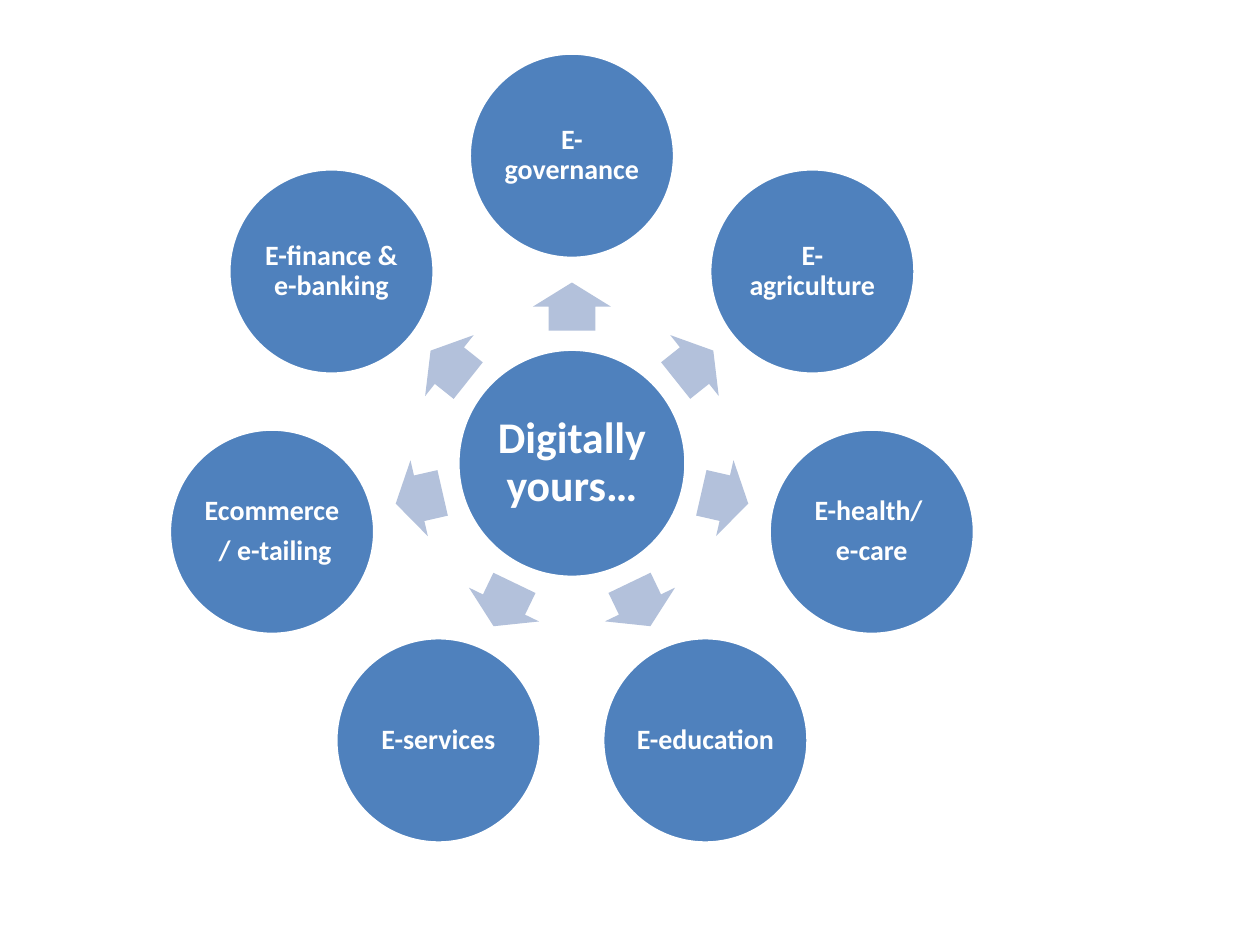
from dataclasses import dataclass
from math import cos, radians, sin

from pptx import Presentation
from pptx.dml.color import RGBColor
from pptx.enum.shapes import MSO_SHAPE
from pptx.enum.text import MSO_ANCHOR, PP_ALIGN
from pptx.util import Cm, Pt


@dataclass(frozen=True)
class Theme:
    font: str = "Calibri"
    circle: RGBColor = RGBColor(0x4F, 0x81, 0xBD)
    arrow: RGBColor = RGBColor(0xB3, 0xC1, 0xDB)
    light: RGBColor = RGBColor(0xFF, 0xFF, 0xFF)
    hub_size: int = 25
    topic_size: int = 16
    outline: int = 2


CENTER_X, CENTER_Y = 11.53, 9.34
HUB_DIAMETER, TOPIC_DIAMETER = 4.6, 4.14
TOPIC_RADIUS, ARROW_RADIUS = 6.2, 3.16
ARROW_LENGTH, ARROW_WIDTH = 0.97, 1.57

HUB = ["Digitally yours…"]
TOPICS = [
    ["E-governance"],
    ["E- agriculture"],
    ["E-health/ ", "e-care"],
    ["E-education"],
    ["E-services"],
    ["Ecommerce", " / e-tailing"],
    ["E-finance & e-banking"],
]


def set_attributes(target, values):
    for name, value in values.items():
        setattr(target, name, value)


def point_on_ring(angle, radius):
    """Return the point in cm at an angle in degrees, clockwise from the right."""
    return (CENTER_X + radius * cos(radians(angle)),
            CENTER_Y + radius * sin(radians(angle)))


class RadialSlide:
    def __init__(self, slide, theme):
        self.slide = slide
        self.theme = theme

    def add_centered_shape(self, kind, center, width, height, color):
        x, y = center
        shape = self.slide.shapes.add_shape(
            kind, Cm(x - width / 2), Cm(y - height / 2), Cm(width), Cm(height))
        shape.shadow.inherit = False
        shape.fill.solid()
        shape.fill.fore_color.rgb = color
        return shape

    def add_circle(self, center, diameter, lines, size, margin):
        shape = self.add_centered_shape(
            MSO_SHAPE.OVAL, center, diameter, diameter, self.theme.circle)
        shape.line.color.rgb = self.theme.light
        shape.line.width = Pt(self.theme.outline)

        frame = shape.text_frame
        sides = ("left", "top", "right", "bottom")
        set_attributes(frame, {f"margin_{side}": Cm(margin) for side in sides})
        set_attributes(frame, {"word_wrap": True,
                               "vertical_anchor": MSO_ANCHOR.MIDDLE})
        for index, line in enumerate(lines):
            paragraph = frame.add_paragraph() if index else frame.paragraphs[0]
            set_attributes(paragraph, {"alignment": PP_ALIGN.CENTER,
                                       "line_spacing": 0.9,
                                       "space_after": Pt(0.35 * size)})
            run = paragraph.add_run()
            run.text = line
            set_attributes(run.font, {"name": self.theme.font,
                                      "size": Pt(size), "bold": True})
            run.font.color.rgb = self.theme.light

    def add_arrow(self, angle):
        """Add an arrow that points outward from the hub."""
        shape = self.add_centered_shape(
            MSO_SHAPE.RIGHT_ARROW, point_on_ring(angle, ARROW_RADIUS),
            ARROW_LENGTH, ARROW_WIDTH, self.theme.arrow)
        shape.line.fill.background()
        shape.adjustments[0] = 0.6
        shape.adjustments[1] = 0.5
        shape.rotation = angle % 360


def main():
    presentation = Presentation()
    presentation.slide_width, presentation.slide_height = Cm(25.4), Cm(19.05)
    blank_layout = presentation.slide_layouts[6]
    theme = Theme()
    radial = RadialSlide(presentation.slides.add_slide(blank_layout), theme)

    radial.add_circle((CENTER_X, CENTER_Y), HUB_DIAMETER, HUB,
                      theme.hub_size, margin=0.08)
    for index, lines in enumerate(TOPICS):
        angle = -90 + index * 360 / len(TOPICS)
        radial.add_arrow(angle)
        radial.add_circle(point_on_ring(angle, TOPIC_RADIUS), TOPIC_DIAMETER,
                          lines, theme.topic_size, margin=0.05)

    presentation.save("out.pptx")


if __name__ == "__main__":
    main()
